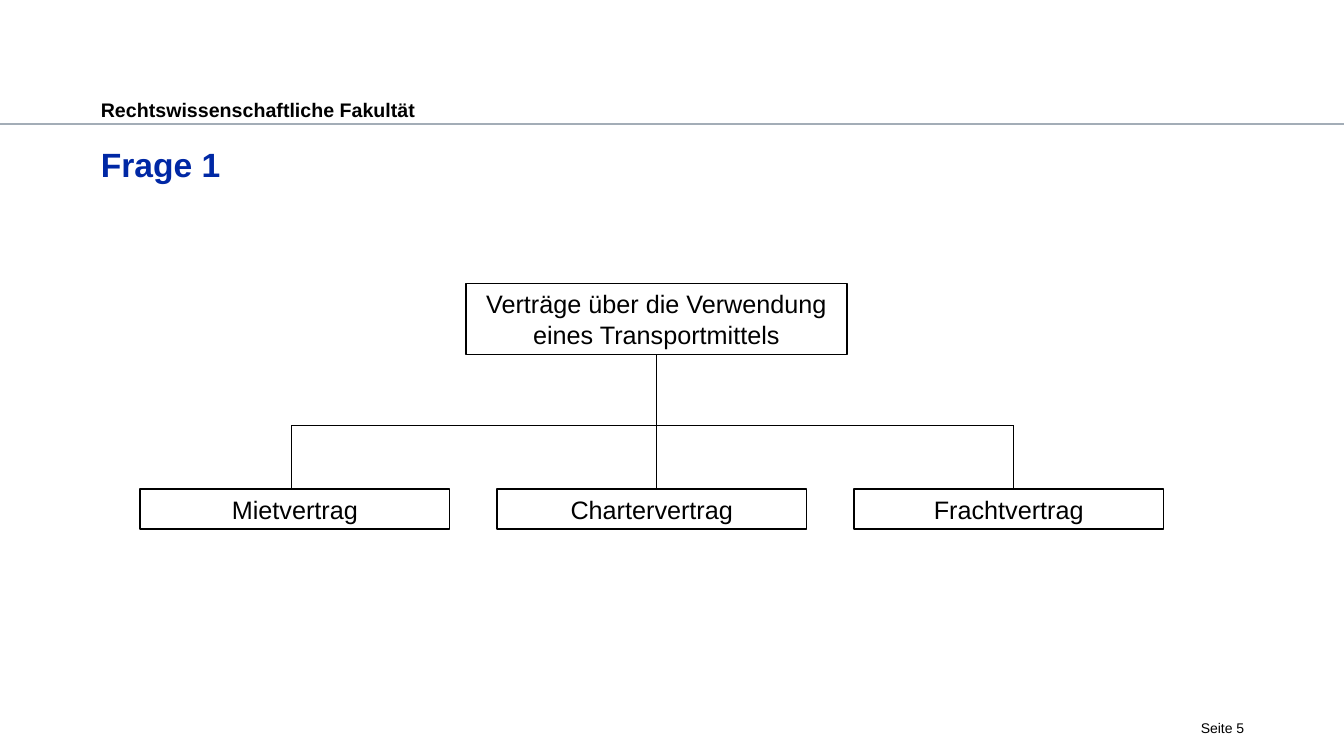
"""Build a slide with a tree of three contract types."""
import dataclasses

import lxml.etree
import pptx
import pptx.dml.color
import pptx.enum.shapes
import pptx.enum.text
import pptx.oxml.ns
import pptx.util

Inches = pptx.util.Inches
Align = pptx.enum.text.PP_ALIGN


@dataclasses.dataclass
class Theme:
    font: str = "Arial"
    ink: str = "000000"
    accent: str = "0028A5"
    rule: str = "A3ADB7"
    title_size: int = 24
    box_size: int = 18
    header_size: int = 14
    footer_size: int = 10


class Page:
    def __init__(self, deck, theme):
        self.theme = theme
        self.shapes = deck.slides.add_slide(deck.slide_layouts[6]).shapes

    def fill_text(self, frame, text, size, color, bold=False, align=Align.LEFT):
        frame.word_wrap = True
        para = frame.paragraphs[0]
        para.text = text
        para.alignment = align
        para.font.name = self.theme.font
        para.font.size = pptx.util.Pt(size)
        para.font.bold = bold
        para.font.color.rgb = pptx.dml.color.RGBColor.from_string(color)

    def text(self, left, top, width, height, text, size, color, inset=0.04, **style):
        frame = self.shapes.add_textbox(
            Inches(left), Inches(top), Inches(width), Inches(height)).text_frame
        frame.margin_left = frame.margin_right = frame.margin_bottom = 0
        frame.margin_top = Inches(inset)
        self.fill_text(frame, text, size, color, **style)

    def stroke(self, line, color, width):
        line.color.rgb = pptx.dml.color.RGBColor.from_string(color)
        line.width = pptx.util.Pt(width)

    def box(self, left, top, width, height, text):
        box = self.shapes.add_shape(
            pptx.enum.shapes.MSO_SHAPE.RECTANGLE,
            Inches(left), Inches(top), Inches(width), Inches(height))
        box.shadow.inherit = False
        box.fill.background()
        self.stroke(box.line, self.theme.ink, 1)
        self.fill_text(box.text_frame, text, self.theme.box_size, self.theme.ink,
                       align=Align.CENTER)
        box.text_frame.auto_size = pptx.enum.text.MSO_AUTO_SIZE.SHAPE_TO_FIT_TEXT
        return box

    def line(self, x1, y1, x2, y2, color, width=1):
        line = self.shapes.add_connector(
            pptx.enum.shapes.MSO_CONNECTOR.STRAIGHT,
            Inches(x1), Inches(y1), Inches(x2), Inches(y2))
        self.stroke(line.line, color, width)
        lxml.etree.SubElement(line.element.spPr, pptx.oxml.ns.qn("a:effectLst"))
        return line


def main():
    deck = pptx.Presentation()
    deck.slide_width, deck.slide_height = Inches(13.33), Inches(7.5)
    theme = Theme()
    page = Page(deck, theme)

    page.line(0, 1.23, 13.33, 1.23, theme.rule, 1.25)
    page.text(1, 0.93, 8.02, 0.25, "Rechtswissenschaftliche Fakultät",
              theme.header_size, theme.ink, bold=True)
    page.text(1, 1.39, 11.34, 0.87, "Frage 1",
              theme.title_size, theme.accent, bold=True)
    page.text(11.43, 7.14, 0.91, 0.24, "Seite 5",
              theme.footer_size, theme.ink, inset=0, align=Align.RIGHT)

    root = page.box(4.62, 2.81, 3.78, 0.71,
                    "Verträge über die Verwendung eines Transportmittels")
    contracts = ("Mietvertrag", "Chartervertrag", "Frachtvertrag")
    branches = (2.89, 6.51, 10.05)
    rail, row, pitch = 4.22, 4.85, 3.54
    for column, (contract, branch) in enumerate(zip(contracts, branches)):
        page.box(1.39 + pitch * column, row, 3.07, 0.4, contract)
        page.line(branch, row, branch, rail, theme.ink)
    page.line(branches[0], rail, branches[-1], rail, theme.ink)
    trunk = page.line(branches[1], 3.52, branches[1], rail, theme.ink)
    trunk.begin_connect(root, 2)

    deck.save("out.pptx")


if __name__ == "__main__":
    main()
